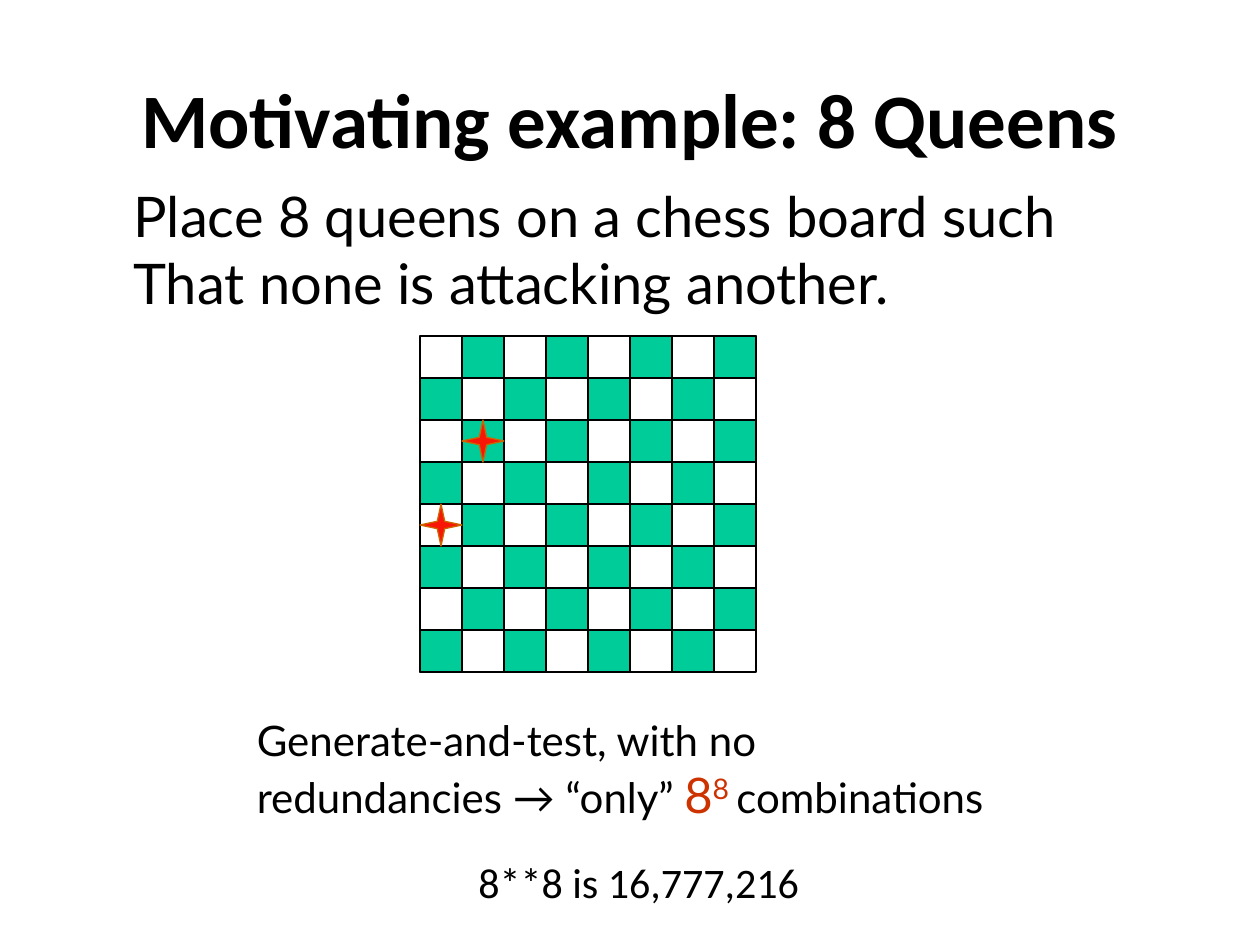
"""Build the slide that introduces the 8 Queens problem."""
from pptx import Presentation
from pptx.dml.color import RGBColor
from pptx.enum.shapes import MSO_SHAPE
from pptx.enum.text import MSO_ANCHOR, PP_ALIGN
from pptx.util import Inches, Pt

RECTANGLE = MSO_SHAPE.RECTANGLE
STAR = MSO_SHAPE.STAR_4_POINT
MIDDLE = MSO_ANCHOR.MIDDLE
LEFT, CENTER = PP_ALIGN.LEFT, PP_ALIGN.CENTER

BLACK = RGBColor(0x00, 0x00, 0x00)
GREEN = RGBColor(0x00, 0xCC, 0x99)
RED = RGBColor(0xF8, 0x17, 0x06)
ORANGE = RGBColor(0xCC, 0x66, 0x00)
RUST = RGBColor(0xCC, 0x33, 0x00)

BOARD_SIZE = 8
SQUARE = Inches(1 / 3)
BOARD_LEFT = Inches(10 / 3)
BOARD_TOP = Inches(8 / 3)
QUEENS = [(4, 0), (2, 1)]


def style_run(run, size, font_name, color=BLACK, bold=False):
    run.font.size = Pt(size)
    run.font.name = font_name
    run.font.color.rgb = color
    run.font.bold = bold


def add_title(slide, wording):
    title = slide.shapes.title
    title.left, title.top = Inches(0), Inches(0.31)
    title.width, title.height = Inches(10), Inches(1.25)
    title.text_frame.text = wording
    title.text_frame.vertical_anchor = MIDDLE
    heading = title.text_frame.paragraphs[0]
    heading.alignment = CENTER
    style_run(heading.runs[0], 44, "Calibri", bold=True)


def add_text(slide, left, top, width, height, lines, size, font_name,
             alignment=LEFT, wrap=False):
    frame = slide.shapes.add_textbox(
        Inches(left), Inches(top), Inches(width), Inches(height)).text_frame
    frame.word_wrap = wrap
    frame.text = "\n".join(lines)
    for paragraph in frame.paragraphs:
        paragraph.alignment = alignment
        for run in paragraph.runs:
            style_run(run, size, font_name)
    return frame


def add_power(paragraph, base, exponent, ending):
    """Append a coloured power and the words after it."""
    for wording, size, color in ((base, 28, RUST), (exponent, 28, RUST),
                                 (ending, 24, BLACK)):
        run = paragraph.add_run()
        run.text = wording
        style_run(run, size, "Lato", color)
    paragraph.runs[-2].font._element.set("baseline", "30000")


def add_piece(board, kind, row, column, span=1, fill=None, line=BLACK):
    piece = board.shapes.add_shape(
        kind, BOARD_LEFT + column * SQUARE, BOARD_TOP + row * SQUARE,
        span * SQUARE, span * SQUARE)
    piece.shadow.inherit = False
    if fill is None:
        piece.fill.background()
    else:
        piece.fill.solid()
        piece.fill.fore_color.rgb = fill
    piece.line.color.rgb = line
    piece.line.width = Pt(0.75)
    return piece


def add_board(slide):
    board = slide.shapes.add_group_shape()
    add_piece(board, RECTANGLE, 0, 0, span=BOARD_SIZE)
    for row in range(BOARD_SIZE):
        for column in range((row + 1) % 2, BOARD_SIZE, 2):
            add_piece(board, RECTANGLE, row, column, fill=GREEN)
    for row, column in QUEENS:
        queen = add_piece(board, STAR, row, column, fill=RED, line=ORANGE)
        queen.adjustments[0] = 0.125


def main():
    presentation = Presentation()
    presentation.slide_width = Inches(10)
    presentation.slide_height = Inches(7.5)
    slide = presentation.slides.add_slide(presentation.slide_layouts[5])

    add_title(slide, "Motivating example: 8 Queens")
    add_board(slide)
    strategy = add_text(
        slide, 1.94, 5.62, 6.17, 0.98,
        ["Generate-and-test, with no", "redundancies → “only” "], 24, "Lato")
    add_power(strategy.paragraphs[1], "8", "8 ", "combinations")
    add_text(slide, 0.96, 1.39, 7.75, 1.18,
             ["Place 8 queens on a chess board such",
              "That none is attacking another."], 32, "Lato")
    add_text(slide, 1.7, 6.75, 6.74, 0.51, ["8**8 is 16,777,216"],
             24, "Calibri", CENTER, wrap=True)

    presentation.save("out.pptx")


if __name__ == "__main__":
    main()
